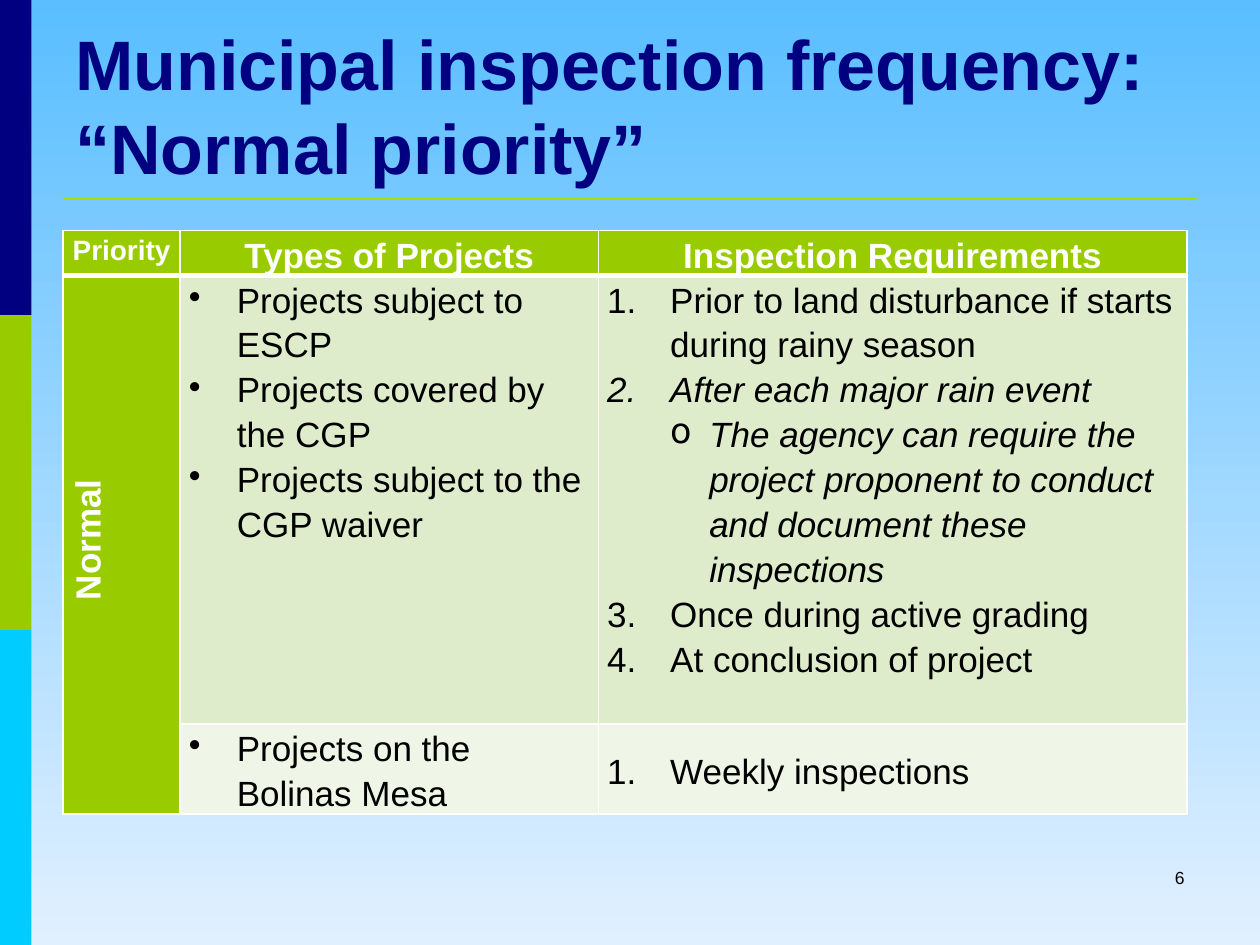
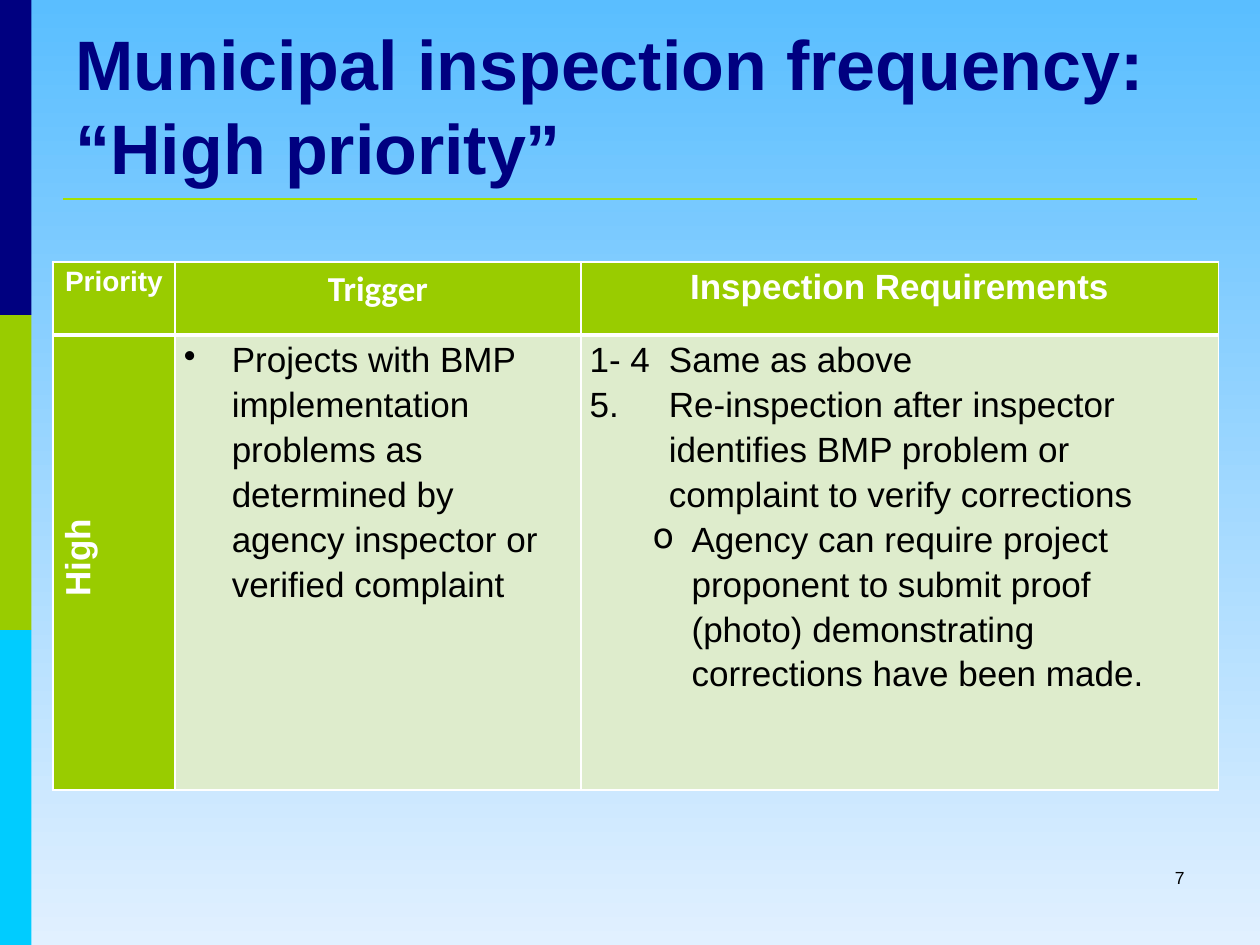
from lxml.etree import SubElement as Sub
from pptx import Presentation
from pptx.dml.color import RGBColor
from pptx.enum.shapes import MSO_CONNECTOR as LINE, MSO_SHAPE as SHAPE
from pptx.enum.text import MSO_ANCHOR as ANCHOR, MSO_AUTO_SIZE as AUTO, PP_ALIGN as ALIGN
from pptx.oxml.ns import qn
from pptx.util import Inches, Pt

NAVY, LIME, CYAN, RULE = "000080", "99CC00", "00CCFF", "A5E100"
SKY, PALE_SKY, WHITE, BLACK = "5ABEFF", "E1F0FF", "FFFFFF", "000000"
GREEN, PALE_GREEN = "DEECCC", "EFF6E7"

FONT = {"name": "Arial", "size": Pt(20), "bold": False, "italic": False, "color": BLACK}
HEAD = {"bold": True, "color": WHITE}
SMALL_HEAD = {**HEAD, "size": Pt(16)}
CALIBRI_HEAD = {**HEAD, "name": "Calibri"}
ITALIC = {"italic": True}
PLAIN = {}

LISTS = {
    "head": {"align": ALIGN.CENTER},
    "side": {"align": ALIGN.CENTER, "left": 0.08},
    "dot": {"left": 0.38, "hang": 0.38, "bullet": ("buChar", "char", "•")},
    "number": {"left": 0.5, "hang": 0.5, "bullet": ("buAutoNum", "type", "arabicPeriod")},
    "typed": {"left": 0.63, "hang": 0.63},
    "sub": {"left": 0.81, "hang": 0.31, "level": 1, "bullet": ("buChar", "char", "o")},
}

SLIDES = [
    {
        "title": "Municipal inspection frequency: “Normal priority”",
        "number": "6",
        "at": (0.5, 1.83),
        "cols": (0.93, 3.32, 4.67),
        "rows": (0.33, 3.56, 0.67),
        "middle": [(2, 2)],
        "cells": [
            [[("head", "Priority", SMALL_HEAD)],
             [("head", "Types of Projects", HEAD)],
             [("head", "Inspection Requirements", HEAD)]],
            [[("side", "Normal", HEAD)],
             [("dot", "Projects subject to ESCP", PLAIN),
              ("dot", "Projects covered by the CGP", PLAIN),
              ("dot", "Projects subject to the CGP waiver", PLAIN)],
             [("number", "Prior to land disturbance if starts during rainy season", PLAIN),
              ("number", "After each major rain event", ITALIC),
              ("sub", "The agency can require the project proponent to conduct "
                      "and document these inspections", ITALIC),
              ("number", "Once during active grading", PLAIN),
              ("number", "At conclusion of project", PLAIN)]],
            [[],
             [("dot", "Projects on the Bolinas Mesa", PLAIN)],
             [("number", "Weekly inspections", PLAIN)]],
        ],
    },
    {
        "title": "Municipal inspection frequency: “High priority”",
        "number": "7",
        "at": (0.42, 2.08),
        "cols": (0.97, 3.22, 5.06),
        "rows": (0.58, 3.61),
        "middle": [],
        "cells": [
            [[("head", "Priority", SMALL_HEAD)],
             [("head", "Trigger", CALIBRI_HEAD)],
             [("head", "Inspection Requirements", HEAD)]],
            [[("side", "High", HEAD)],
             [("dot", "Projects with BMP implementation problems as determined by "
                      "agency inspector or verified complaint", PLAIN)],
             [("typed", "1- 4\tSame as above", PLAIN),
              ("typed", "5.\tRe-inspection after inspector identifies BMP problem or "
                        "complaint to verify corrections", PLAIN),
              ("sub", "Agency can require project proponent to submit proof (photo) "
                      "demonstrating corrections have been made.", PLAIN)]],
        ],
    },
]


def rgb(color):
    """Turn a hex string into a colour."""
    return RGBColor.from_string(color)


def write(p, text, **changes):
    """Add a run in the base font with the given changes."""
    r = p.add_run()
    r.text = text
    for key, value in {**FONT, **changes}.items():
        if key == "color":
            r.font.color.rgb = rgb(value)
        else:
            setattr(r.font, key, value)


def write_item(p, kind, text, changes):
    """Write one paragraph of a table cell with its indent and bullet."""
    style = LISTS[kind]
    p.line_spacing = 1.15
    p.alignment = style.get("align", ALIGN.LEFT)
    p.level = style.get("level", 0)
    left, hang = Inches(style.get("left", 0)), Inches(style.get("hang", 0))
    pPr = p._p.get_or_add_pPr()
    pPr.set("marL", str(left))
    pPr.set("indent", str(-hang))
    if "bullet" in style:
        tag, key, value = style["bullet"]
        Sub(pPr, qn("a:" + tag)).set(key, value)
    if hang:
        Sub(Sub(pPr, qn("a:tabLst")), qn("a:tab"), pos=str(left), algn="l")
    write(p, text, **changes)


def set_borders(cell, row):
    """Draw white cell borders, thick between header and body."""
    widths = {"lnL": 1, "lnR": 1, "lnT": 3 if row == 1 else 1, "lnB": 3 if row == 0 else 1}
    tcPr = cell._tc.get_or_add_tcPr()
    for tag, width in widths.items():
        ln = Sub(tcPr, qn("a:" + tag), w=str(Pt(width)))
        Sub(Sub(ln, qn("a:solidFill")), qn("a:srgbClr"), val=WHITE)


def fill_cell(cell, row, col, items, middle):
    """Format one cell and write its items."""
    cell.margin_left = cell.margin_right = Inches(0.07)
    cell.margin_top = cell.margin_bottom = 0
    set_borders(cell, row)
    cell.fill.solid()
    body = GREEN if row == 1 else PALE_GREEN
    cell.fill.fore_color.rgb = rgb(LIME if row == 0 or col == 0 else body)
    side = col == 0 and row > 0
    cell.vertical_anchor = ANCHOR.MIDDLE if side or middle else ANCHOR.TOP
    if side:
        cell._tc.get_or_add_tcPr().set("vert", "vert270")
    tf = cell.text_frame
    for i, item in enumerate(items):
        write_item(tf.add_paragraph() if i else tf.paragraphs[0], *item)


def add_priority_table(s, data):
    """Add the table of projects and inspections."""
    cols, rows = data["cols"], data["rows"]
    box = [Inches(v) for v in (*data["at"], sum(cols), sum(rows))]
    table = s.shapes.add_table(len(rows), len(cols), *box).table
    table.horz_banding = False
    for column, width in zip(table.columns, cols):
        column.width = Inches(width)
    for row, height in zip(table.rows, rows):
        row.height = Inches(height)
    for i, line in enumerate(data["cells"]):
        for j, items in enumerate(line):
            fill_cell(table.cell(i, j), i, j, items, (i, j) in data["middle"])
    if len(rows) > 2:
        table.cell(1, 0).merge(table.cell(len(rows) - 1, 0))


def add_title(s, text):
    """Place and write the slide title."""
    sp = s.shapes.title
    sp.left, sp.top, sp.width, sp.height = (Inches(v) for v in (0.5, 0.3, 9, 1.25))
    tf = sp.text_frame
    tf.auto_size, tf.vertical_anchor = AUTO.NONE, ANCHOR.BOTTOM
    tf.paragraphs[0].alignment = ALIGN.LEFT
    write(tf.paragraphs[0], text, size=Pt(40), bold=True, color=NAVY)


def add_number(s, text):
    """Add the slide number at the lower right."""
    tf = s.shapes.add_textbox(Inches(7.17), Inches(6.83), Inches(2.33), Inches(0.5)).text_frame
    tf.word_wrap = True
    tf.paragraphs[0].alignment = ALIGN.RIGHT
    write(tf.paragraphs[0], text, size=Pt(10))


def dress_master(prs, s):
    """Give the master its background, side bands and title rule."""
    master = prs.slide_master
    fill = master.background.fill
    fill.gradient()
    fill.gradient_angle = 270
    for stop, position, color in zip(fill.gradient_stops, (0, 1), (SKY, PALE_SKY)):
        stop.position, stop.color.rgb = position, rgb(color)
    parts = []
    for i, color in enumerate((NAVY, LIME, CYAN)):
        band = s.shapes.add_shape(SHAPE.RECTANGLE, 0, Inches(2.5 * i), Inches(0.25), Inches(2.5))
        band.shadow.inherit = False
        band.fill.solid()
        band.fill.fore_color.rgb = rgb(color)
        band.line.fill.background()
        parts.append(band)
    rule = s.shapes.add_connector(LINE.STRAIGHT, Inches(0.5), Inches(1.58), Inches(9.5), Inches(1.58))
    rule.line.color.rgb, rule.line.width = rgb(RULE), Pt(1)
    Sub(rule.element.spPr, qn("a:effectLst"))
    for part in parts + [rule]:
        master.shapes.element.insert(2, part.element)


def main():
    """Build the deck."""
    prs = Presentation()
    prs.slide_width, prs.slide_height = Inches(10), Inches(7.5)
    for i, data in enumerate(SLIDES):
        s = prs.slides.add_slide(prs.slide_layouts[5])
        if i == 0:
            dress_master(prs, s)
        add_priority_table(s, data)
        add_title(s, data["title"])
        add_number(s, data["number"])
    prs.save("out.pptx")


if __name__ == "__main__":
    main()
